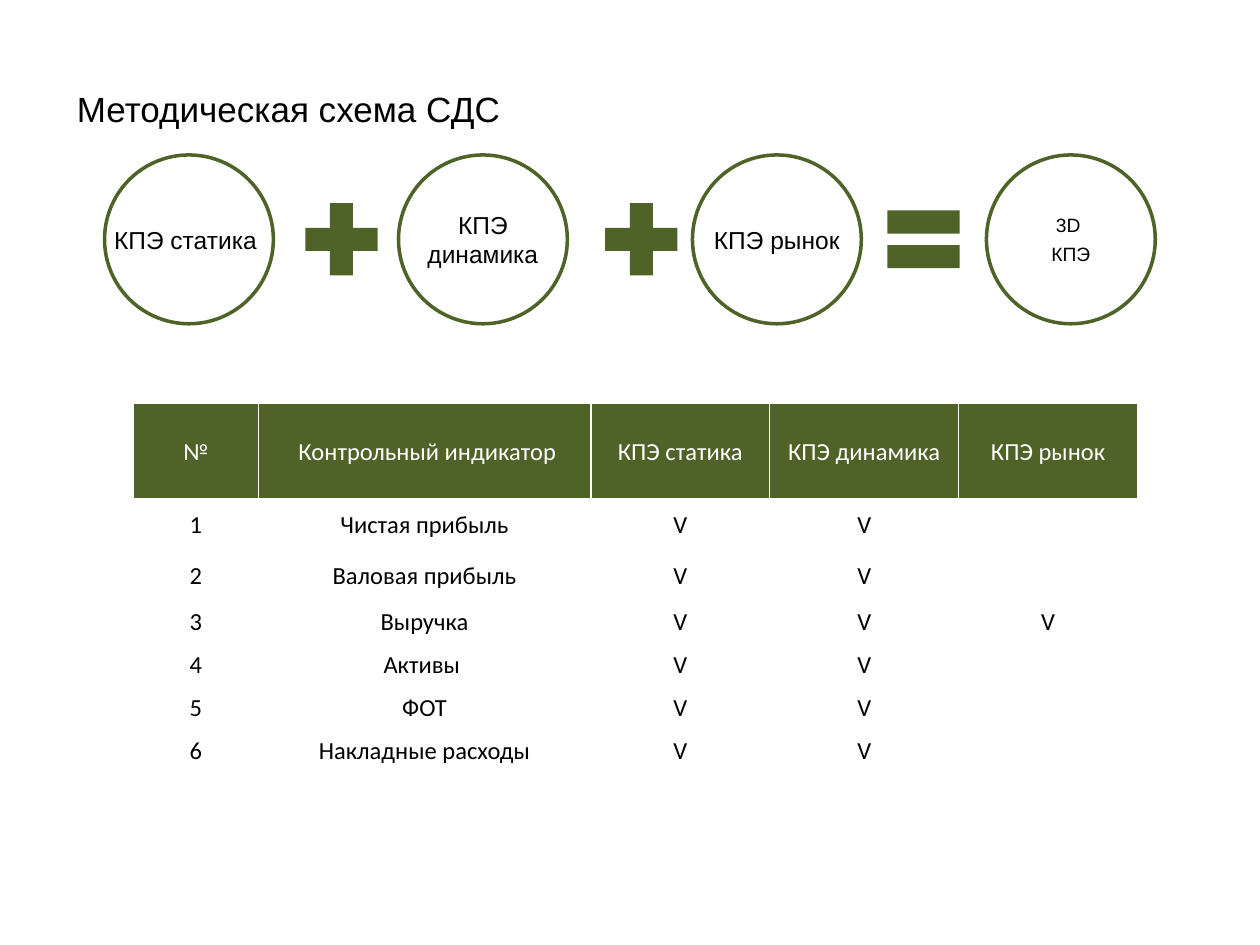
from dataclasses import dataclass

from lxml import etree
from pptx import Presentation
from pptx import util as u
from pptx.dml.color import RGBColor
from pptx.enum import shapes, text
from pptx.oxml import ns

COLORS = {"green": "4F6228", "white": "FFFFFF", "black": "000000"}
WIDTH, HEIGHT = 10, 7.5
CIRCLE, SIGN = 0.134 * WIDTH, 0.078 * WIDTH
CIRCLE_LEFT, CIRCLE_TOP, CIRCLE_STEP = 0.083 * WIDTH, 0.164 * HEIGHT, 2.333
COLUMNS = [0.99, 2.64, 1.42, 1.5, 1.42]
ROWS = [0.77] + [0.4] * 2 + [0.34] * 4
SHAPE = shapes.MSO_SHAPE


@dataclass
class Circle:
    lines: list[str]
    size: int = 14
    wrap: bool = False


@dataclass
class Sign:
    kind: SHAPE
    left: float  # share of the slide's width


@dataclass
class Indicator:
    name: str
    market: str = ""


CIRCLES = [
    Circle(["КПЭ статика "]),
    Circle(["КПЭ динамика"], wrap=True),
    Circle(["КПЭ рынок"]),
    Circle(["3D ", "КПЭ"], size=11),
]
SIGNS = [
    Sign(SHAPE.MATH_PLUS, 0.232),
    Sign(SHAPE.MATH_PLUS, 0.47),
    Sign(SHAPE.MATH_EQUAL, 0.694),
]
HEADER = ["№", " Контрольный индикатор", "КПЭ статика", "КПЭ динамика", "КПЭ рынок"]
INDICATORS = [
    Indicator("Чистая прибыль"),
    Indicator("Валовая прибыль"),
    Indicator("Выручка", market="V"),
    Indicator("Активы "),
    Indicator("ФОТ"),
    Indicator("Накладные расходы"),
]


def color(name: str) -> RGBColor:
    return RGBColor.from_string(COLORS[name])


def style(p, size: float, font: str, ink: str, align=text.PP_ALIGN.CENTER) -> None:
    p.alignment = align
    p.font.size, p.font.name, p.font.bold = u.Pt(size), font, False
    p.font.color.rgb = color(ink)


def set_insets(frame, inset: float) -> None:
    """Give a text frame or a table cell the same inset on all sides."""
    frame.margin_left = frame.margin_right = u.Inches(inset)
    frame.margin_top = frame.margin_bottom = u.Inches(inset)


def add_filled(s, kind: SHAPE, left: float, top: float, side: float, fill: str):
    sp = s.shapes.add_shape(kind, *map(u.Inches, (left, top, side, side)))
    sp.shadow.inherit = False
    sp.fill.solid()
    sp.fill.fore_color.rgb = color(fill)
    sp.line.fill.background()
    return sp


def add_circle(s, column: int, circle: Circle) -> None:
    left = CIRCLE_LEFT + column * CIRCLE_STEP
    sp = add_filled(s, SHAPE.OVAL, left, CIRCLE_TOP, CIRCLE, "white")
    sp.line.color.rgb = color("green")
    sp.line.width = u.Pt(2)
    tf = sp.text_frame
    tf.word_wrap = circle.wrap
    tf.vertical_anchor = text.MSO_ANCHOR.MIDDLE
    set_insets(tf, 0.02)
    tf.text = "\n".join(circle.lines)
    for p in tf.paragraphs:
        style(p, circle.size, "Arial", "black")
        p.space_after = u.Pt(0.35 * circle.size)


def add_borders(cell, bottom: float) -> None:
    """Draw white cell borders, 1 pt except the bottom one."""
    tc_pr = cell._tc.get_or_add_tcPr()
    for side, points in {"L": 1, "R": 1, "T": 1, "B": bottom}.items():
        ln = etree.SubElement(tc_pr, ns.qn(f"a:ln{side}"), w=str(u.Pt(points)))
        fill = etree.SubElement(ln, ns.qn("a:solidFill"))
        etree.SubElement(fill, ns.qn("a:srgbClr"), val=COLORS["white"])


def fill_cell(cell, value: str, header: bool, padded: bool) -> None:
    add_borders(cell, bottom=3 if header else 1)
    if header:
        cell.fill.solid()
        cell.fill.fore_color.rgb = color("green")
    else:
        cell.fill.background()
    if not padded:
        set_insets(cell, 0)
    cell.vertical_anchor = text.MSO_ANCHOR.MIDDLE
    cell.text = value
    style(cell.text_frame.paragraphs[0], 14, "Calibri", "white" if header else "black")


def add_indicator_table(s) -> None:
    rows = [HEADER] + [
        [str(number), item.name, "V", "V", item.market]
        for number, item in enumerate(INDICATORS, 1)
    ]
    box = map(u.Inches, (1.06, 3.2, sum(COLUMNS), sum(ROWS)))
    table = s.shapes.add_table(len(ROWS), len(COLUMNS), *box).table
    table.first_row = table.horz_banding = False
    for column, width in zip(table.columns, COLUMNS):
        column.width = u.Inches(width)
    for r, (height, values) in enumerate(zip(ROWS, rows)):
        table.rows[r].height = u.Inches(height)
        for c, value in enumerate(values):
            fill_cell(table.cell(r, c), value, header=r == 0, padded=r == 0 or c == 0)


def add_title(s) -> None:
    title = s.shapes.title
    title.left, title.top = u.Inches(0.51), u.Inches(0.64)
    title.width, title.height = u.Inches(9.13), u.Inches(0.44)
    tf = title.text_frame
    tf.text = "Методическая схема СДС"
    tf.vertical_anchor = text.MSO_ANCHOR.MIDDLE
    style(tf.paragraphs[0], 20, "Arial", "black", text.PP_ALIGN.LEFT)


def main() -> None:
    prs = Presentation()
    prs.slide_width, prs.slide_height = u.Inches(WIDTH), u.Inches(HEIGHT)
    s = prs.slides.add_slide(prs.slide_layouts.get_by_name("Title Only"))
    add_title(s)
    for column, circle in enumerate(CIRCLES):
        add_circle(s, column, circle)
    sign_top = CIRCLE_TOP + (CIRCLE - SIGN) / 2
    for sign in SIGNS:
        add_filled(s, sign.kind, sign.left * WIDTH, sign_top, SIGN, "green")
    add_indicator_table(s)
    prs.save("out.pptx")


if __name__ == "__main__":
    main()
